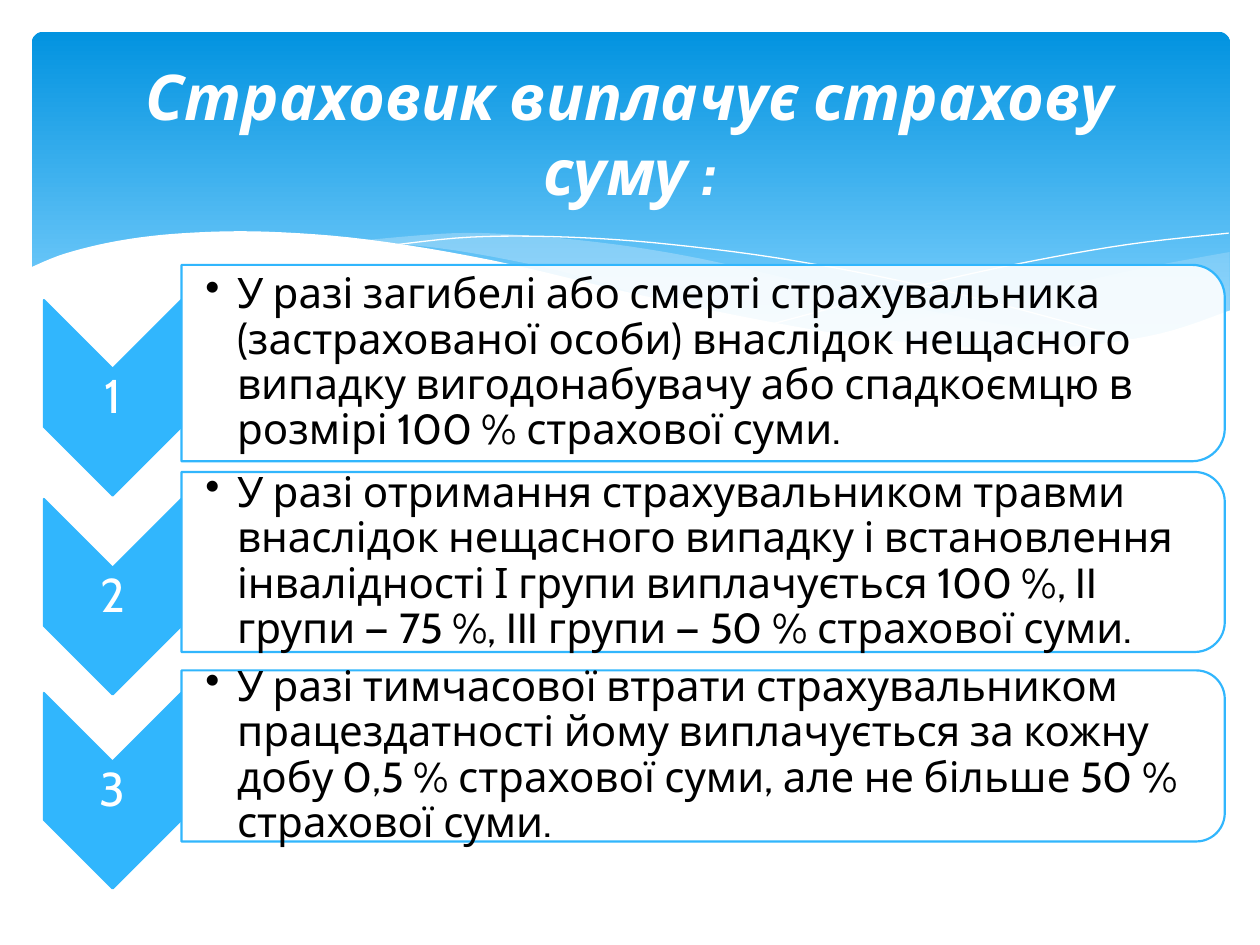
"""Build the slide on insurance payouts: a wave banner above three numbered cards."""
from dataclasses import dataclass

from lxml import etree
from pptx import Presentation
from pptx.dml.color import RGBColor
from pptx.enum import shapes, text
from pptx.oxml import ns
from pptx.util import Cm, Pt


@dataclass(frozen=True)
class Theme:
    font: str = "Cabin"
    white: str = "FFFFFF"
    black: str = "000000"
    accent: str = "31B6FD"
    mist: str = "C6E7FC"
    sky_top: str = "0293E0"
    sky_bottom: str = "83D3FE"
    title_size: int = 36
    number_size: int = 27
    body_size: int = 24
    outline: float = 1.25


theme = Theme()


def paint(shape, fill, alpha, line, width=0):
    shape.shadow.inherit = False
    if fill:
        shape.fill.solid()
        shape.fill.fore_color.rgb = RGBColor.from_string(fill)
        color = shape.fill._xPr.find(".//" + ns.qn("a:srgbClr"))
        etree.SubElement(color, ns.qn("a:alpha"), val=str(alpha * 1000))
    else:
        shape.fill.background()
    if line:
        shape.line.color.rgb = RGBColor.from_string(line)
        shape.line.width = Pt(width)
    else:
        shape.line.fill.background()


def write(box, content, size, color, align, spacing):
    frame = box.text_frame
    frame.text = content
    frame.word_wrap = True
    frame.auto_size = text.MSO_AUTO_SIZE.NONE
    frame.vertical_anchor = text.MSO_ANCHOR.MIDDLE
    para = frame.paragraphs[0]
    para.alignment = align
    para.line_spacing = spacing
    span = para.runs[0]
    span.font.name = theme.font
    span.font.size = Pt(size)
    span.font.color.rgb = RGBColor.from_string(color)
    return para


deck = Presentation()
deck.slide_width, deck.slide_height = Cm(25.4), Cm(19.05)
page = deck.slides.add_slide(deck.slide_layouts[5])

banner = page.shapes.add_shape(
    shapes.MSO_SHAPE.ROUNDED_RECTANGLE, Cm(0.64), Cm(0.64), Cm(24.16), Cm(6.86))
banner.adjustments[0] = 0.034
banner.shadow.inherit = False
banner.line.fill.background()
banner.fill.gradient()
banner.fill.gradient_angle = 270
stops = zip(banner.fill.gradient_stops, (0, 0.9), (theme.sky_top, theme.sky_bottom))
for stop, position, color in stops:
    stop.position = position
    stop.color.rgb = RGBColor.from_string(color)

waves = [
    (theme.mist, 29, None, [
        [(24.79, 5.08), (23.01, 5.41), (21.13, 5.84), (19.13, 6.3), (16.79, 6.73)],
        [(16.79, 6.73), (18.26, 6.91), (20.12, 7.04), (21.69, 7.01), (23.19, 6.78),
         (24.79, 6.27)]]),
    (theme.mist, 40, None, [
        [(22.68, 6.93), (20.5, 6.6), (17.93, 6.1), (15.98, 5.64), (14.1, 5.21),
         (12.42, 4.93), (10.67, 4.75), (9.17, 4.7), (7.26, 4.85)],
        [(7.26, 4.85), (9.19, 5.05), (11.4, 5.49), (13.46, 6.1), (15.7, 6.55),
         (17.65, 6.86), (19.63, 7.04), (21.03, 7.06), (22.68, 6.93)]]),
    (None, 0, theme.white, [
        [(7.85, 4.95), (9.5, 4.78), (11.43, 4.78), (13.54, 4.93), (16.15, 5.28),
         (19.3, 5.92), (23.04, 6.91)]]),
    (None, 0, theme.white, [
        [(15.57, 6.53), (18.29, 5.82), (20.47, 5.33), (22.73, 4.93), (24.77, 4.7)]]),
    (theme.white, 100, None, [
        [(24.82, 6.25), (23.37, 6.73), (21.59, 6.99), (19.76, 7.01), (17.48, 6.81),
         (15.32, 6.45), (12.78, 5.92), (9.93, 5.25), (7.42, 4.83), (5.36, 4.67),
         (3.71, 4.7), (2.41, 4.85), (1.32, 5.11), (0.58, 5.41)],
        [(0.58, 8.36), (24.82, 8.36)]]),
]
steps = 6
for fill, alpha, line, edges in waves:
    outline = []
    for edge in edges:
        knots = [edge[0], *edge, edge[-1]]
        for a, b, c, d in zip(knots, knots[1:], knots[2:], knots[3:]):
            for t in (step / steps for step in range(steps)):
                outline.append(tuple(
                    Cm(q + t / 2 * (r - p + t * (2 * p - 5 * q + 4 * r - s
                                                 + t * (3 * (q - r) + s - p))))
                    for p, q, r, s in zip(a, b, c, d)))
        outline.append(tuple(Cm(value) for value in edge[-1]))
    builder = page.shapes.build_freeform(*outline[0])
    builder.add_line_segments(outline[1:], close=fill is not None)
    paint(builder.convert_to_shape(), fill, alpha, line)

cards = [
    (7.32, 3.96, "У разі загибелі або смерті страхувальника (застрахованої особи) "
     "внаслідок нещасного випадку вигодонабувачу або спадкоємцю в розмірі 100 % "
     "страхової суми."),
    (11.33, 3.63, "У разі отримання страхувальником травми внаслідок нещасного "
     "випадку і встановлення інвалідності І групи виплачується 100 %, II групи — "
     "75 %, III групи — 50 % страхової суми."),
    (15.24, 3.45, "У разі тимчасової втрати страхувальником працездатності йому "
     "виплачується за кожну добу 0,5 % страхової суми, але не більше 50 % "
     "страхової суми."),
]
chevron_x, chevron_drop, chevron_length, chevron_width = 2.27, 0.7, 3.94, 2.77
card_left, card_width = 3.66, 21.03
card_x = card_left + card_width / 2
for number, (middle, height, content) in enumerate(cards, 1):
    chevron_y = middle + chevron_drop
    chevron = page.shapes.add_shape(
        shapes.MSO_SHAPE.CHEVRON,
        Cm(chevron_x - chevron_length / 2), Cm(chevron_y - chevron_width / 2),
        Cm(chevron_length), Cm(chevron_width))
    paint(chevron, theme.accent, 100, theme.accent, theme.outline)
    label = page.shapes.add_textbox(
        Cm(chevron_x - chevron_width / 2), Cm(chevron_y - 0.6), Cm(chevron_width), Cm(1.2))
    write(label, str(number), theme.number_size, theme.white, text.PP_ALIGN.CENTER, 0.9)

    card = page.shapes.add_shape(
        shapes.MSO_SHAPE.ROUND_2_SAME_RECTANGLE,
        Cm(card_x - height / 2), Cm(middle - card_width / 2), Cm(height), Cm(card_width))
    paint(card, theme.white, 90, theme.accent, theme.outline)
    chevron.rotation = card.rotation = 90
    body = page.shapes.add_textbox(
        Cm(card_left), Cm(middle - height / 2 + 0.2), Cm(20.85), Cm(height - 0.4))
    para = write(body, content, theme.body_size, theme.black, text.PP_ALIGN.LEFT, 0.9)
    indent = para._p.get_or_add_pPr()
    indent.set("marL", str(Cm(0.64)))
    indent.set("indent", str(Cm(-0.64)))
    etree.SubElement(indent, ns.qn("a:buChar"), char="•")
    for box, inset in ((label, 0.05), (body, 0.48)):
        frame = box.text_frame
        frame.margin_left = Cm(inset)
        frame.margin_top = frame.margin_right = frame.margin_bottom = Cm(0.05)

title = page.shapes.title
title.left, title.top, title.width, title.height = Cm(1.27), Cm(0.94), Cm(22.86), Cm(3.48)
heading = write(title, "Страховик виплачує страхову суму :", theme.title_size,
                theme.white, text.PP_ALIGN.CENTER, 1.0)
heading.runs[0].font.bold = heading.runs[0].font.italic = True
page.shapes._spTree.append(title._element)

deck.save("out.pptx")
